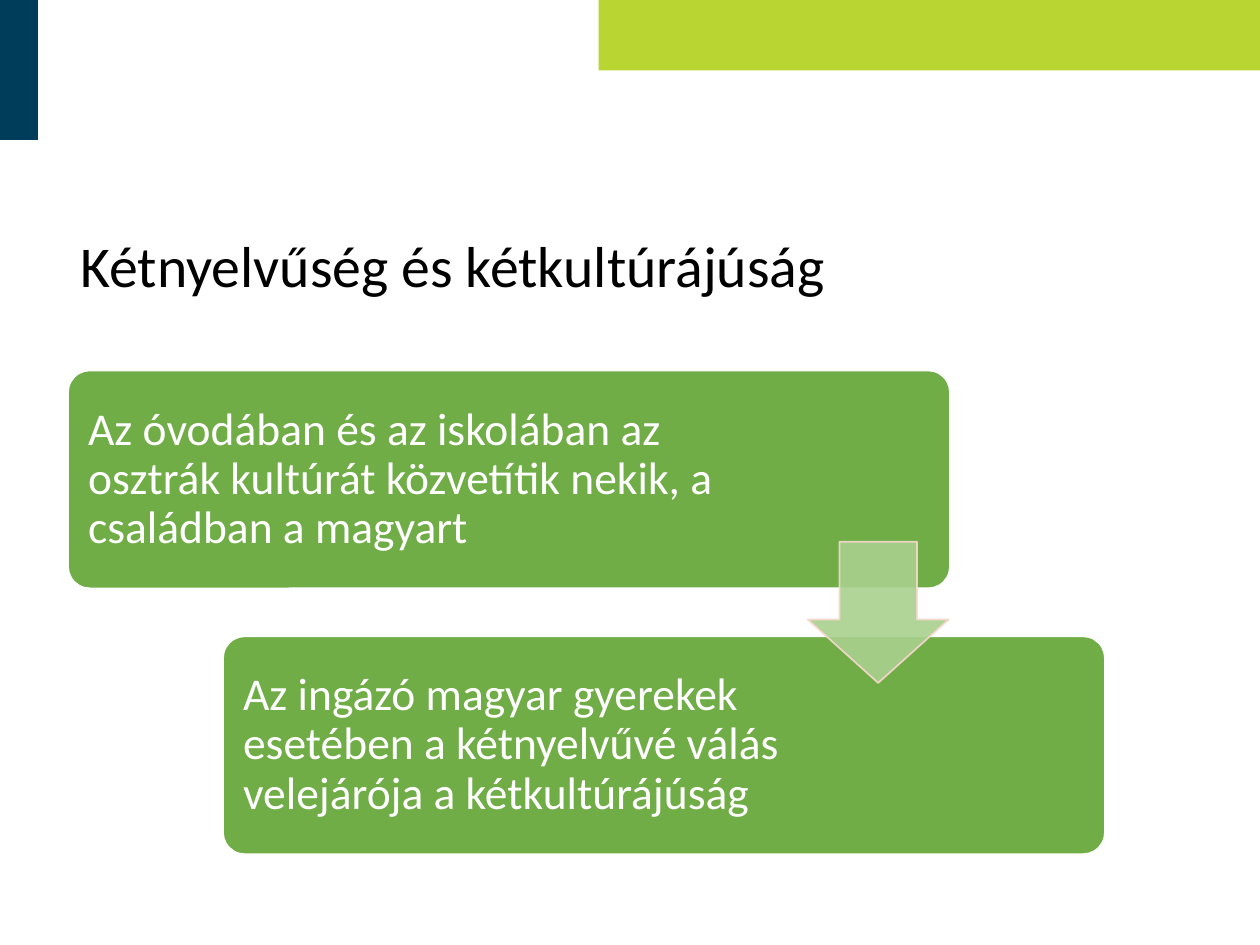
"""Build a slide on bilingualism and biculturalism with two linked steps."""
from dataclasses import dataclass

from lxml.etree import SubElement
from pptx import Presentation
from pptx.dml.color import RGBColor
from pptx.enum.shapes import MSO_SHAPE as Preset
from pptx.enum.text import MSO_ANCHOR as Anchor, PP_ALIGN as Align
from pptx.oxml.ns import qn
from pptx.util import Inches, Pt


@dataclass(frozen=True)
class Theme:
    font: str = "Calibri"
    title_size: int = 33
    step_size: int = 26
    black: str = "000000"
    white: str = "FFFFFF"
    lime: str = "B9D531"
    navy: str = "003D5B"
    green: str = "70AD47"
    arrow: str = "A9D18E"
    arrow_line: str = "F8D7CE"
    arrow_opacity: int = 90


@dataclass(frozen=True)
class Box:
    left: float
    top: float
    width: float
    height: float

    def lengths(self):
        return [Inches(v) for v in (self.left, self.top, self.width, self.height)]


@dataclass(frozen=True)
class Step:
    left: float
    top: float
    text_width: float
    text: str


THEME = Theme()
STEP_WIDTH, STEP_HEIGHT, STEP_PADDING = 7, 1.73, 0.05
STEPS = (
    Step(0.54, 2.94, 5.21,
         "Az óvodában és az iskolában az osztrák kultúrát közvetítik nekik, a családban a magyart"),
    Step(1.77, 5.05, 4.54,
         "Az ingázó magyar gyerekek esetében a kétnyelvűvé válás velejárója a kétkultúrájúság"),
)


def add_block(slide, preset: Preset, box: Box, fill: str, line: str | None = None,
              adjustments: tuple[float, ...] = ()):
    shape = slide.shapes.add_shape(preset, *box.lengths())
    shape.shadow.inherit = False
    for index, value in enumerate(adjustments):
        shape.adjustments[index] = value
    shape.fill.solid()
    shape.fill.fore_color.rgb = RGBColor.from_string(fill)
    if line is None:
        shape.line.fill.background()
    else:
        shape.line.color.rgb = RGBColor.from_string(line)
        shape.line.width = Pt(1)
    return shape


def set_opacity(shape, percent: int) -> None:
    for color in shape._element.spPr.iter(qn("a:srgbClr")):
        SubElement(color, qn("a:alpha"), val=str(percent * 1000))


def add_text(slide, box: Box, text: str, size: int, color: str,
             side: float, vertical: float) -> None:
    frame = slide.shapes.add_textbox(*box.lengths()).text_frame
    frame.word_wrap = True
    frame.vertical_anchor = Anchor.MIDDLE
    frame.margin_left = frame.margin_right = Inches(side)
    frame.margin_top = frame.margin_bottom = Inches(vertical)
    paragraph = frame.paragraphs[0]
    paragraph.alignment = Align.LEFT
    paragraph.line_spacing = 0.9
    run = paragraph.add_run()
    run.text = text
    run.font.name = THEME.font
    run.font.size = Pt(size)
    run.font.color.rgb = RGBColor.from_string(color)


def add_step(slide, step: Step) -> None:
    add_block(slide, Preset.ROUNDED_RECTANGLE,
              Box(step.left, step.top, STEP_WIDTH, STEP_HEIGHT),
              THEME.green, THEME.white, (0.1,))
    text_box = Box(step.left + STEP_PADDING, step.top + STEP_PADDING,
                   step.text_width, STEP_HEIGHT - 2 * STEP_PADDING)
    add_text(slide, text_box, step.text, THEME.step_size, THEME.white, 0.11, 0.11)


def main() -> None:
    presentation = Presentation()
    presentation.slide_width, presentation.slide_height = Inches(10), Inches(7.5)
    slide = presentation.slides.add_slide(presentation.slide_layouts[6])
    add_block(slide, Preset.RECTANGLE, Box(4.75, 0, 5.25, 0.56), THEME.lime)
    add_block(slide, Preset.RECTANGLE, Box(-0.01, 0, 0.31, 1.11), THEME.navy)
    add_text(slide, Box(0.54, 1.41, 8.24, 1.45), "Kétnyelvűség és kétkultúrájúság",
             THEME.title_size, THEME.black, 0.1, 0.05)
    for step in STEPS:
        add_step(slide, step)
    arrow = add_block(slide, Preset.DOWN_ARROW, Box(6.41, 4.3, 1.12, 1.12),
                      THEME.arrow, THEME.arrow_line, (0.55, 0.45))
    set_opacity(arrow, THEME.arrow_opacity)
    presentation.save("out.pptx")


if __name__ == "__main__":
    main()
